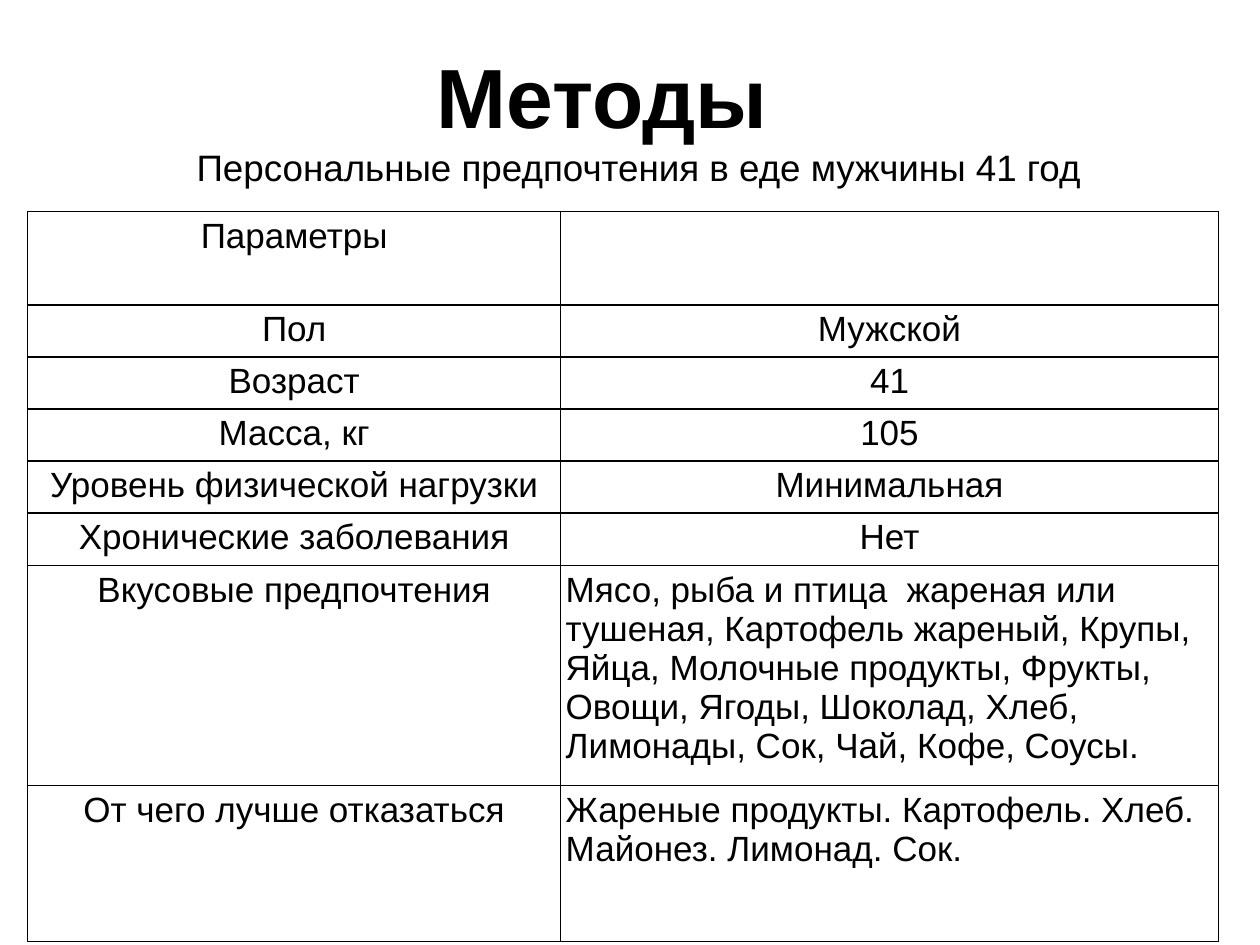
from lxml.etree import SubElement
from pptx import Presentation
from pptx.dml.color import RGBColor
from pptx.enum.text import MSO_ANCHOR, PP_ALIGN
from pptx.oxml.ns import qn
from pptx.util import Inches, Pt

BLACK, WHITE = "000000", "FFFFFF"
ROWS = [
    ("Параметры", ""),
    ("Пол", "Мужской"),
    ("Возраст", "41"),
    ("Масса, кг", "105"),
    ("Уровень физической нагрузки", "Минимальная"),
    ("Хронические заболевания", "Нет"),
    ("Вкусовые предпочтения",
     "Мясо, рыба и птица  жареная или тушеная, Картофель жареный, Крупы, "
     "Яйца, Молочные продукты, Фрукты, Овощи, Ягоды, Шоколад, Хлеб, "
     "Лимонады, Сок, Чай, Кофе, Соусы."),
    ("От чего лучше отказаться",
     "Жареные продукты. Картофель. Хлеб. Майонез. Лимонад. Сок."),
]
WIDTHS = [4.23, 5.22]
HEIGHTS = [0.74] + [0.4] * 5 + [1.74, 1.24]
LONG = 40  # longer texts are set flush left


def paint(code):
    return RGBColor.from_string(code)


def write(frame, text, size=20, bold=False, align=PP_ALIGN.CENTER):
    frame.word_wrap = True
    para = frame.paragraphs[0]
    para.alignment = align
    run = para.add_run()
    run.text = text
    font = run.font
    font.name, font.size, font.bold = "Arial", Pt(size), bold
    font.color.rgb = paint(BLACK)


def add_text(slide, box, text, anchor=MSO_ANCHOR.TOP, **style):
    frame = slide.shapes.add_textbox(*map(Inches, box)).text_frame
    frame.vertical_anchor = anchor
    write(frame, text, **style)


def add_border(cell, color=BLACK, width=1):
    props = cell._tc.get_or_add_tcPr()
    for side in "LRTB":
        line = SubElement(props, qn(f"a:ln{side}"), w=str(Pt(width)))
        fill = SubElement(line, qn("a:solidFill"))
        SubElement(fill, qn("a:srgbClr"), val=color)


def fill_cell(cell, text):
    cell.margin_left = cell.margin_right = Inches(0.04)
    cell.margin_top = cell.margin_bottom = Inches(0.04)
    add_border(cell)
    cell.fill.solid()
    cell.fill.fore_color.rgb = paint(WHITE)
    if text:
        align = PP_ALIGN.LEFT if len(text) > LONG else PP_ALIGN.CENTER
        write(cell.text_frame, text, align=align)


def add_grid(slide, left, top):
    shape = slide.shapes.add_table(
        len(ROWS), len(WIDTHS), Inches(left), Inches(top),
        Inches(sum(WIDTHS)), Inches(sum(HEIGHTS)))
    table = shape.table
    table.first_row = table.horz_banding = False
    for column, width in zip(table.columns, WIDTHS):
        column.width = Inches(width)
    for row, height, texts in zip(table.rows, HEIGHTS, ROWS):
        row.height = Inches(height)
        for cell, text in zip(row.cells, texts):
            fill_cell(cell, text)


def main():
    deck = Presentation()
    deck.slide_width, deck.slide_height = Inches(10), Inches(7.5)
    slide = deck.slides.add_slide(deck.slide_layouts[6])
    add_text(slide, (0.28, 0.13, 9, 1.25), "Методы",
             anchor=MSO_ANCHOR.MIDDLE, size=48, bold=True)
    add_text(slide, (0.7, 1.1, 8.74, 0.4),
             "Персональные предпочтения в еде мужчины 41 год", size=21)
    add_grid(slide, 0.22, 1.68)
    deck.save("out.pptx")


if __name__ == "__main__":
    main()
